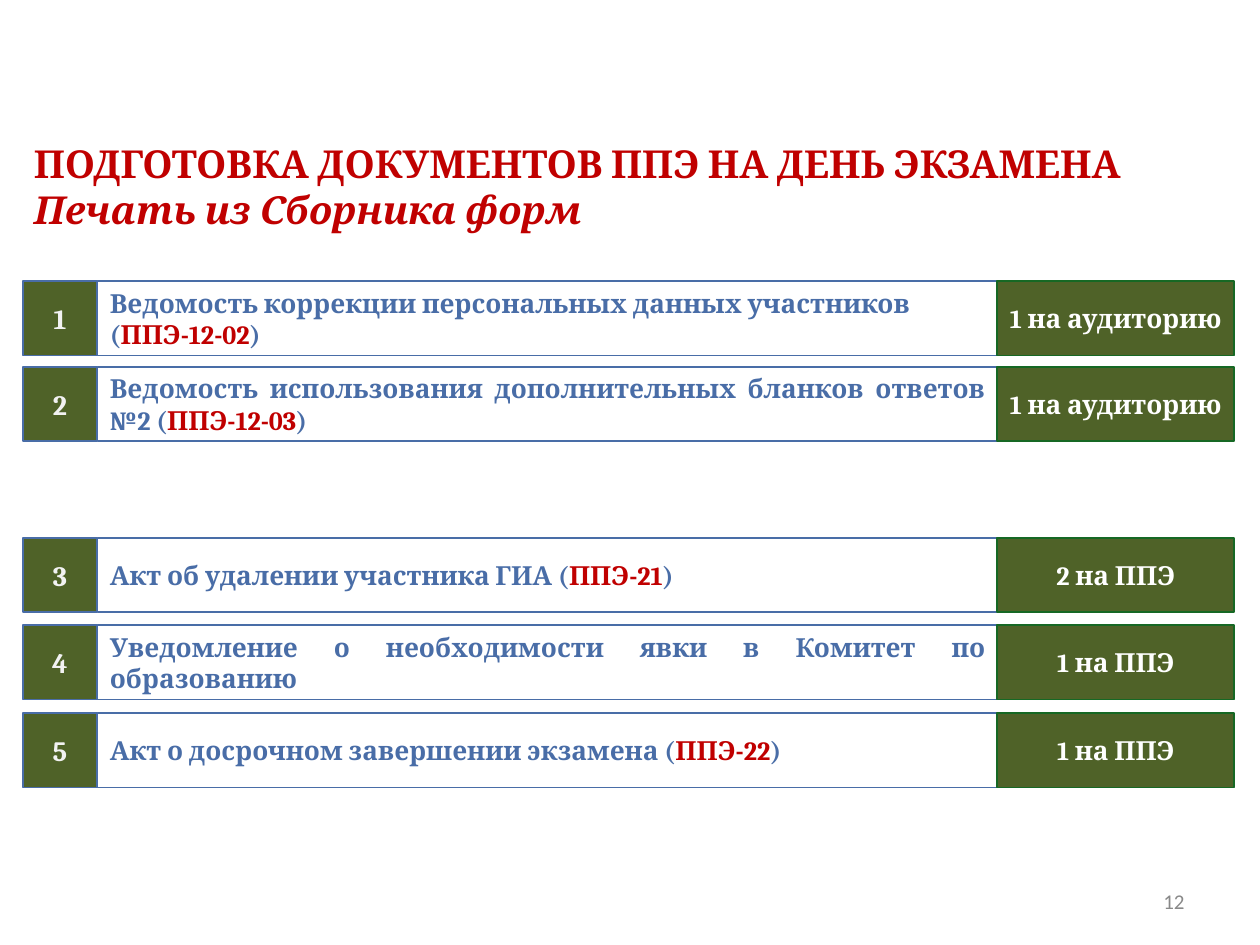
from dataclasses import dataclass

from pptx import Presentation
from pptx.dml.color import RGBColor
from pptx.enum.shapes import MSO_SHAPE
from pptx.enum.text import MSO_ANCHOR, MSO_AUTO_SIZE, PP_ALIGN
from pptx.util import Pt

GREEN, DARK_GREEN, BLUE, RED = "4F6228", "166824", "496DA7", "C00000"
WHITE, PALE, GREY = "FFFFFF", "F2F2F2", "898989"
ROW_HEIGHT = 42.5


@dataclass
class Column:
    left: float
    width: float


@dataclass
class FormRow:
    top: float
    lines: list[str]
    code: str
    count: str


NUMBER = Column(13, 42.5)
NAME = Column(55.7, 514.8)
COUNT = Column(569.9, 135.4)

ROWS = [
    FormRow(160.6, ["Ведомость коррекции персональных данных участников", "("],
            "ППЭ-12-02", "1 на аудиторию"),
    FormRow(209.7, ["Ведомость использования дополнительных бланков ответов №2 ("],
            "ППЭ-12-03", "1 на аудиторию"),
    FormRow(307.4, ["Акт об удалении участника ГИА ("], "ППЭ-21", "2 на ППЭ"),
    FormRow(357.2, ["Уведомление о необходимости явки в Комитет по образованию"],
            "", "1 на ППЭ"),
    FormRow(407.5, ["Акт о досрочном завершении экзамена ("], "ППЭ-22", "1 на ППЭ"),
]


def color(value: str) -> RGBColor:
    return RGBColor.from_string(value)


def set_font(font, size: float, shade: str, name: str = "Cambria", bold: bool = True) -> None:
    font.name, font.size, font.bold = name, Pt(size), bold
    font.color.rgb = color(shade)


def add_cell(page, column: Column, top: float, border: str, fill: str | None = None):
    """Draw one bordered rectangle and return its text frame."""
    box = page.shapes.add_shape(MSO_SHAPE.RECTANGLE, Pt(column.left), Pt(top),
                                Pt(column.width), Pt(ROW_HEIGHT))
    box.shadow.inherit = False
    if fill:
        box.fill.solid()
        box.fill.fore_color.rgb = color(fill)
    else:
        box.fill.background()
    box.line.color.rgb = color(border)
    box.line.width = Pt(1)
    frame = box.text_frame
    frame.word_wrap = True
    frame.vertical_anchor = MSO_ANCHOR.MIDDLE
    return frame


def add_label(page, column: Column, top: float, border: str, text: str,
              size: float, shade: str) -> None:
    para = add_cell(page, column, top, border, GREEN).paragraphs[0]
    para.text = text
    para.alignment = PP_ALIGN.CENTER
    set_font(para.font, size, shade)


def add_name(page, row: FormRow) -> None:
    frame = add_cell(page, NAME, row.top, BLUE)
    frame.text = "\n".join(row.lines)
    for para in frame.paragraphs:
        para.alignment = PP_ALIGN.JUSTIFY
        set_font(para.font, 15, BLUE)
    if row.code:
        span = para.add_run()
        span.text = row.code
        span.font.color.rgb = color(RED)
        para.add_run().text = ")"


def add_title(page) -> None:
    title = page.shapes.title
    title.left, title.top, title.width, title.height = Pt(12.2), Pt(76.3), Pt(720), Pt(60.5)
    frame = title.text_frame
    frame.word_wrap = True
    frame.auto_size = MSO_AUTO_SIZE.NONE
    frame.vertical_anchor = MSO_ANCHOR.TOP
    frame.text = "ПОДГОТОВКА ДОКУМЕНТОВ ППЭ НА ДЕНЬ ЭКЗАМЕНА\nПечать из Сборника форм"
    for para in frame.paragraphs:
        para.alignment = PP_ALIGN.LEFT
        set_font(para.font, 22, RED)
    para.font.italic = True


def add_page_number(page, number: int) -> None:
    box = page.shapes.add_textbox(Pt(516), Pt(500.5), Pt(168), Pt(28.75))
    frame = box.text_frame
    frame.word_wrap = True
    frame.vertical_anchor = MSO_ANCHOR.MIDDLE
    para = frame.paragraphs[0]
    para.text = str(number)
    para.alignment = PP_ALIGN.RIGHT
    set_font(para.font, 12, GREY, "Calibri", bold=False)


def main() -> None:
    deck = Presentation()
    deck.slide_width, deck.slide_height = Pt(720), Pt(540)
    page = deck.slides.add_slide(deck.slide_layouts[5])  # title only

    add_title(page)

    # Numbered forms with the copies needed
    for number, row in enumerate(ROWS, start=1):
        add_name(page, row)
        add_label(page, NUMBER, row.top, BLUE, str(number), 16, PALE)
        add_label(page, COUNT, row.top, DARK_GREEN, row.count, 15, WHITE)

    add_page_number(page, 12)
    deck.save("out.pptx")


if __name__ == "__main__":
    main()
